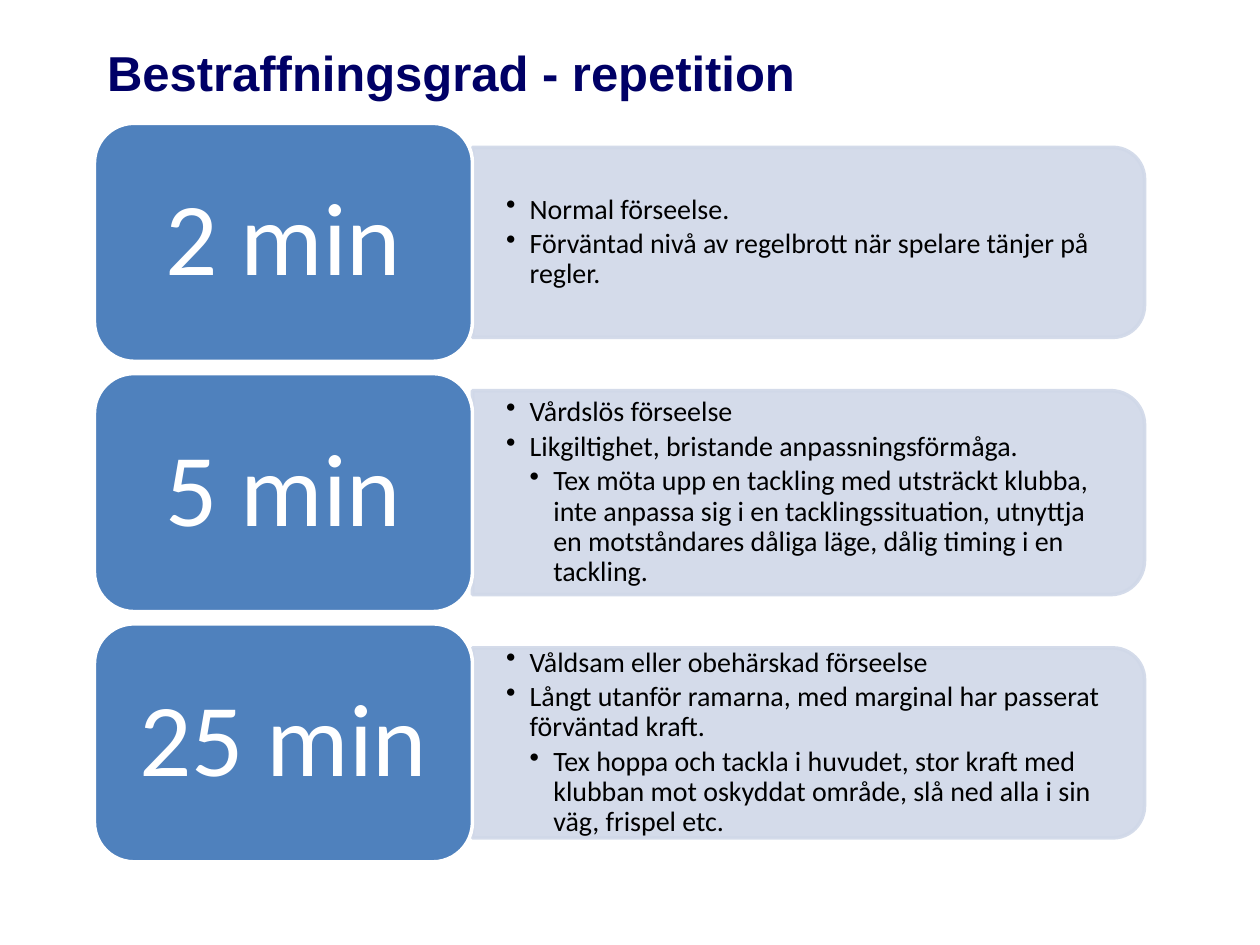
from lxml import etree
from pptx import Presentation
from pptx.dml.color import RGBColor
from pptx.enum.shapes import MSO_SHAPE
from pptx.enum.text import MSO_ANCHOR, PP_ALIGN
from pptx.oxml.ns import qn
from pptx.util import Pt

ROUNDED = MSO_SHAPE.ROUNDED_RECTANGLE
ROUNDED_TOP = MSO_SHAPE.ROUND_2_SAME_RECTANGLE
MIDDLE, TOP = MSO_ANCHOR.MIDDLE, MSO_ANCHOR.TOP
LEFT, CENTER = PP_ALIGN.LEFT, PP_ALIGN.CENTER

CARD_LEFT, CARD_TOP = 54, 70.5
CARD_WIDTH, CARD_HEIGHT, CARD_PITCH = 216, 136, 143
PANEL_WIDTH, TEXT_WIDTH = 384, 378
BULLET_INDENT = 13.5

# Penalty, panel height, list of (level, text)
PENALTIES = [
    ("2 min", 108.6, [
        (1, "Normal förseelse."),
        (1, "Förväntad nivå av regelbrott när spelare tänjer på regler."),
    ]),
    ("5 min", 116.6, [
        (1, "Vårdslös förseelse"),
        (1, "Likgiltighet, bristande anpassningsförmåga."),
        (2, "Tex möta upp en tackling med utsträckt klubba, inte anpassa sig "
            "i en tacklingssituation, utnyttja en motståndares dåliga läge, "
            "dålig timing i en tackling."),
    ]),
    ("25 min", 108.6, [
        (1, "Våldsam eller obehärskad förseelse"),
        (1, "Långt utanför ramarna, med marginal har passerat förväntad kraft."),
        (2, "Tex hoppa och tackla i huvudet, stor kraft med klubban mot "
            "oskyddat område, slå ned alla i sin väg, frispel etc."),
    ]),
]


def color(value):
    return RGBColor.from_string(value)


def set_opacity(fill_parent, percent):
    """Apply an opacity to the solid fill directly under the element."""
    rgb = fill_parent.find(qn("a:solidFill")).find(qn("a:srgbClr"))
    etree.SubElement(rgb, qn("a:alpha"), val=str(percent * 1000))


class PenaltySlide:
    title_font, body_font = "Arial", "Calibri"
    title_color, card_color, panel_color = "000066", "4F81BD", "D0D8E8"
    text_color, light_color = "000000", "FFFFFF"

    def __init__(self, presentation):
        self.slide = presentation.slides.add_slide(presentation.slide_layouts[5])

    def style_font(self, paragraph, name, size, font_color, bold=False):
        font = paragraph.font
        font.name, font.size, font.bold = name, Pt(size), bold
        font.color.rgb = color(font_color)

    def set_frame(self, frame, anchor, horizontal, vertical):
        frame.word_wrap = True
        frame.vertical_anchor = anchor
        frame.margin_left = frame.margin_right = Pt(horizontal)
        frame.margin_top = frame.margin_bottom = Pt(vertical)

    def title(self, text):
        title = self.slide.shapes.title
        title.left, title.top = Pt(54), Pt(17.3)
        title.width, title.height = Pt(612), Pt(53.3)
        self.set_frame(title.text_frame, TOP, 7.2, 7.2)
        paragraph = title.text_frame.paragraphs[0]
        paragraph.text = text
        paragraph.alignment = LEFT
        self.style_font(paragraph, self.title_font, 28, self.title_color, bold=True)

    def shape(self, kind, left, top, width, height, fill, line):
        shape = self.slide.shapes.add_shape(
            kind, Pt(left), Pt(top), Pt(width), Pt(height))
        shape.shadow.inherit = False
        shape.fill.solid()
        shape.fill.fore_color.rgb = color(fill)
        shape.line.color.rgb = color(line)
        shape.line.width = Pt(2)
        return shape

    def panel(self, left, middle, width, height):
        """Draw a panel rounded on its right side, centred on a height."""
        panel = self.shape(
            ROUNDED_TOP, left + (width - height) / 2, middle - width / 2,
            height, width, self.panel_color, self.panel_color)
        panel.rotation = 90
        properties = panel.fill._xPr
        set_opacity(properties, 90)
        set_opacity(properties.find(qn("a:ln")), 90)

    def bullets(self, left, middle, width, height, items):
        box = self.slide.shapes.add_textbox(
            Pt(left), Pt(middle - height / 2), Pt(width), Pt(height))
        frame = box.text_frame
        self.set_frame(frame, MIDDLE, 19.2, 9.6)
        for index, (level, text) in enumerate(items):
            paragraph = frame.add_paragraph() if index else frame.paragraphs[0]
            paragraph.text = text
            paragraph.level = level
            properties = paragraph._p.get_or_add_pPr()
            properties.set("marL", str(Pt(level * BULLET_INDENT)))
            properties.set("indent", str(-Pt(BULLET_INDENT)))
            etree.SubElement(properties, qn("a:buChar"), char="•")
            paragraph.line_spacing = 0.9
            paragraph.space_after = Pt(2.4)
            self.style_font(paragraph, self.body_font, 16, self.text_color)

    def card(self, left, top, width, height, text):
        card = self.shape(ROUNDED, left, top, width, height,
                          self.card_color, self.light_color)
        self.set_frame(card.text_frame, MIDDLE, 17.7, 8.9)
        paragraph = card.text_frame.paragraphs[0]
        paragraph.text = text
        paragraph.alignment = CENTER
        paragraph.line_spacing = 0.9
        self.style_font(paragraph, self.body_font, 59, self.light_color)


def main():
    presentation = Presentation()
    presentation.slide_width, presentation.slide_height = Pt(720), Pt(540)
    slide = PenaltySlide(presentation)
    slide.title("Bestraffningsgrad - repetition")
    panel_left = CARD_LEFT + CARD_WIDTH
    for row, (penalty, panel_height, items) in enumerate(PENALTIES):
        top = CARD_TOP + row * CARD_PITCH
        middle = top + CARD_HEIGHT / 2
        slide.panel(panel_left, middle, PANEL_WIDTH, panel_height)
        slide.bullets(panel_left, middle, TEXT_WIDTH, panel_height - 10, items)
        slide.card(CARD_LEFT, top, CARD_WIDTH, CARD_HEIGHT, penalty)
    presentation.save("out.pptx")


if __name__ == "__main__":
    main()
